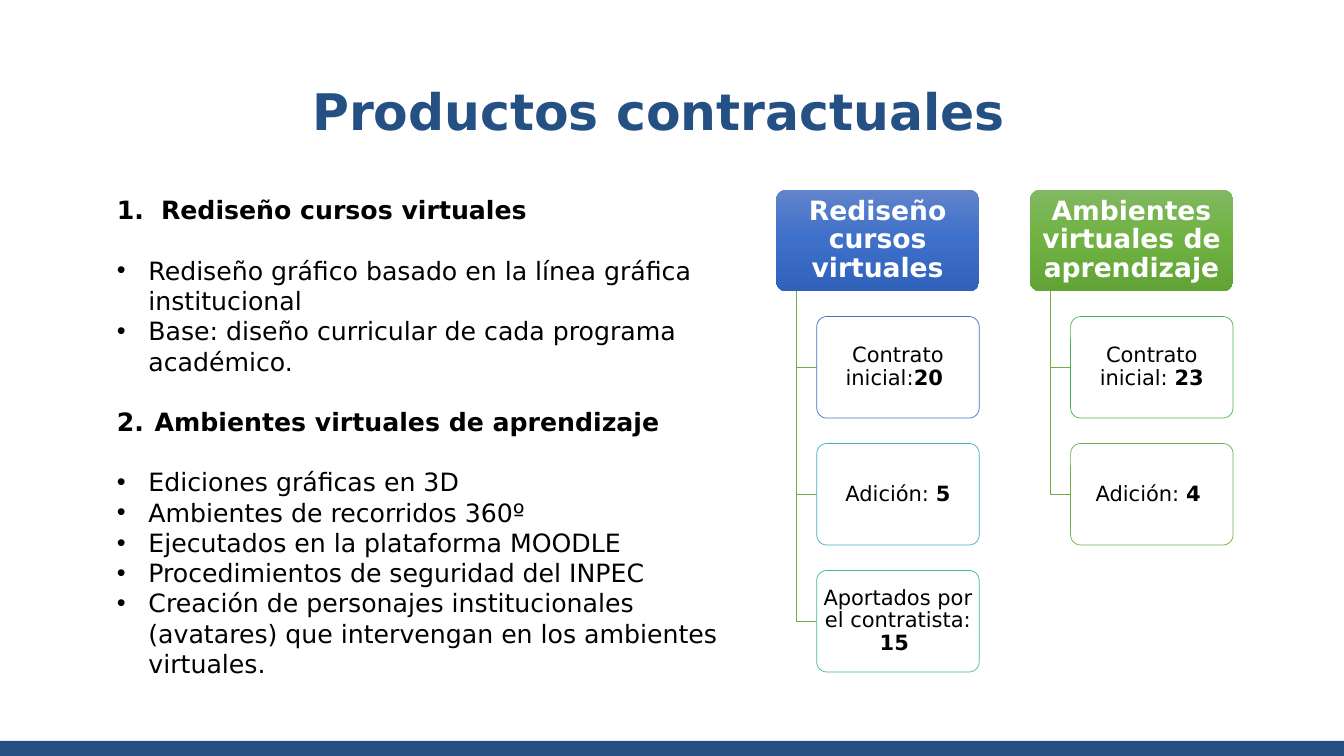
from copy import deepcopy

from lxml.etree import SubElement
from pptx import Presentation
from pptx.dml.color import RGBColor
from pptx.enum.shapes import MSO_SHAPE as Shape
from pptx.enum.text import MSO_ANCHOR as Anchor, MSO_AUTO_SIZE as AutoSize, PP_ALIGN as Align
from pptx.oxml.ns import qn
from pptx.util import Pt

FONT = "DejaVu Sans"
NAVY, BLACK, WHITE, GREEN = "255083", "000000", "FFFFFF", "70AD47"
LINE = 21.6  # height of one line of the body text

SECTIONS = [
    ("Rediseño cursos virtuales", 31.5, [
        "Rediseño gráfico basado en la línea gráfica institucional",
        "Base: diseño curricular de cada programa académico.",
    ]),
    ("Ambientes virtuales de aprendizaje", 27, [
        "Ediciones gráficas en 3D",
        "Ambientes de recorridos 360º",
        "Ejecutados en la plataforma MOODLE",
        "Procedimientos de seguridad del INPEC",
        "Creación de personajes institucionales (avatares) "
        "que intervengan en los ambientes virtuales.",
    ]),
]

# Heading, its gradient, then the cards: label, quantity, outline colour
BRANCHES = [
    ("Rediseño cursos virtuales", ("6183CB", "3E70CA", "3062BB"), [
        ("Contrato inicial:", "20 ", "4472C4"),
        ("Adición: ", "5", "43AFC0"),
        ("Aportados por el contratista: ", "15 ", "43BB8D"),
    ]),
    ("Ambientes virtuales de aprendizaje", ("81B861", "6FB242", "62A336"), [
        ("Contrato inicial: ", "23", "45B451"),
        ("Adición: ", "4 ", GREEN),
    ]),
]


def rgb(hex_code):
    return RGBColor.from_string(hex_code)


def apply(target, formats):
    for name, value in formats.items():
        setattr(target, name, value)


def place(part, left, top, width, height):
    apply(part, dict(left=Pt(left), top=Pt(top), width=Pt(width), height=Pt(height)))


def write(paragraph, words, size, color=BLACK, bold=False):
    run = paragraph.add_run()
    run.text = words
    apply(run.font, dict(name=FONT, size=Pt(size), bold=bold))
    run.font.color.rgb = rgb(color)


def add_footer_band(slide, left, top, width, height):
    band = slide.shapes.add_shape(Shape.RECTANGLE, Pt(left), Pt(top), Pt(width), Pt(height))
    band.shadow.inherit = False
    band.fill.solid()
    band.fill.fore_color.rgb = rgb(NAVY)
    band.line.fill.background()


def fill_title(slide, left, top, width, height):
    title = slide.shapes.title
    place(title, left, top, width, height)
    apply(title.text_frame, dict(word_wrap=True, auto_size=AutoSize.NONE,
                                 vertical_anchor=Anchor.MIDDLE))
    heading = title.text_frame.paragraphs[0]
    heading.alignment = Align.CENTER
    write(heading, "Productos contractuales", 36, NAVY, True)


def mark(paragraph, indent, tag, **attributes):
    """Give a paragraph a hanging bullet or number."""
    props = paragraph._p.get_or_add_pPr()
    props.set("marL", str(Pt(indent)))
    props.set("indent", str(-Pt(indent)))
    SubElement(props, qn(tag), attributes)


def fill_body(slide, left, top, width, height):
    body = slide.placeholders[1]
    place(body, left, top, width, height)
    frame = body.text_frame
    apply(frame, dict(word_wrap=True, auto_size=AutoSize.NONE, vertical_anchor=Anchor.TOP))
    spacing = dict(alignment=Align.LEFT, line_spacing=Pt(LINE),
                   space_before=Pt(0), space_after=Pt(0))
    for number, (section, indent, points) in enumerate(SECTIONS, 1):
        # Numbered heading, set off by one line
        heading = frame.paragraphs[0] if number == 1 else frame.add_paragraph()
        mark(heading, indent, "a:buAutoNum", type="arabicPeriod", startAt=str(number))
        apply(heading, spacing | dict(space_before=Pt(LINE * (number > 1)),
                                      space_after=Pt(LINE)))
        write(heading, section, 18, bold=True)
        # Bulleted points
        for point in points:
            item = frame.add_paragraph()
            mark(item, 22.5, "a:buChar", char="•")
            apply(item, spacing)
            write(item, point, 18)


def add_box(slide, left, top, width, height, inset_x, inset_y):
    box = slide.shapes.add_shape(Shape.ROUNDED_RECTANGLE,
                                 Pt(left), Pt(top), Pt(width), Pt(height))
    box.shadow.inherit = False
    box.adjustments[0] = 0.1
    apply(box.text_frame, dict(
        word_wrap=True, vertical_anchor=Anchor.MIDDLE,
        margin_left=Pt(inset_x), margin_right=Pt(inset_x),
        margin_top=Pt(inset_y), margin_bottom=Pt(inset_y)))
    apply(box.text_frame.paragraphs[0], dict(alignment=Align.CENTER, line_spacing=0.9))
    return box


def add_head(slide, left, top, width, height, words, shades):
    head = add_box(slide, left, top, width, height, 2.9, 2)
    head.line.fill.background()
    head.fill.gradient()
    head.fill.gradient_angle = 270
    stop_list = head._element.spPr.find(qn("a:gradFill")).find(qn("a:gsLst"))
    stop_list.insert(1, deepcopy(stop_list[0]))
    for stop, shade, position in zip(head.fill.gradient_stops, shades, (0, 0.5, 1)):
        stop.color.rgb = rgb(shade)
        stop.position = position
    write(head.text_frame.paragraphs[0], words, 19, WHITE, True)


def add_card(slide, left, top, width, height, label, quantity, outline):
    card = add_box(slide, left, top, width, height, 2.2, 1.4)
    card.fill.solid()
    card.fill.fore_color.rgb = rgb(WHITE)
    white = card._element.spPr.find(qn("a:solidFill"))[0]
    SubElement(white, qn("a:alpha"), val="90000")
    card.line.color.rgb = rgb(outline)
    card.line.width = Pt(0.5)
    paragraph = card.text_frame.paragraphs[0]
    write(paragraph, label, 15)
    write(paragraph, quantity, 15, bold=True)


def add_elbow(slide, left, top, right, bottom):
    path_builder = slide.shapes.build_freeform(Pt(left), Pt(top))
    path_builder.add_line_segments([(Pt(left), Pt(bottom)), (Pt(right), Pt(bottom))],
                                   close=False)
    elbow = path_builder.convert_to_shape()
    elbow.shadow.inherit = False
    elbow.fill.background()
    elbow.line.color.rgb = rgb(GREEN)
    elbow.line.width = Pt(0.5)


def add_branches(slide, left, top, width, height):
    """Boxes are 4/9 of the width and 4/19 of the height, a quarter box apart."""
    box_width, box_height = width / 2.25, height / 4.75
    for column, (heading, shades, cards) in enumerate(BRANCHES):
        x = left + column * 1.25 * box_width
        add_head(slide, x, top, box_width, box_height, heading, shades)
        card_x = x + 0.2 * box_width
        for row, card in enumerate(cards, 1):
            card_y = top + row * 1.25 * box_height
            add_elbow(slide, x + 0.1 * box_width, top + box_height,
                      card_x, card_y + box_height / 2)
            add_card(slide, card_x, card_y, 0.8 * box_width, box_height, *card)


def main():
    deck = Presentation()
    apply(deck, dict(slide_width=Pt(960), slide_height=Pt(540)))
    slide = deck.slides.add_slide(deck.slide_layouts[1])
    add_footer_band(slide, 0, 529.2, 960, 10.8)
    fill_title(slide, 119.5, 53.3, 702, 51.1)
    add_branches(slide, 554.4, 135.4, 326.4, 344.6)
    fill_body(slide, 76.3, 135.4, 481.7, 356.4)
    deck.save("out.pptx")


if __name__ == "__main__":
    main()
